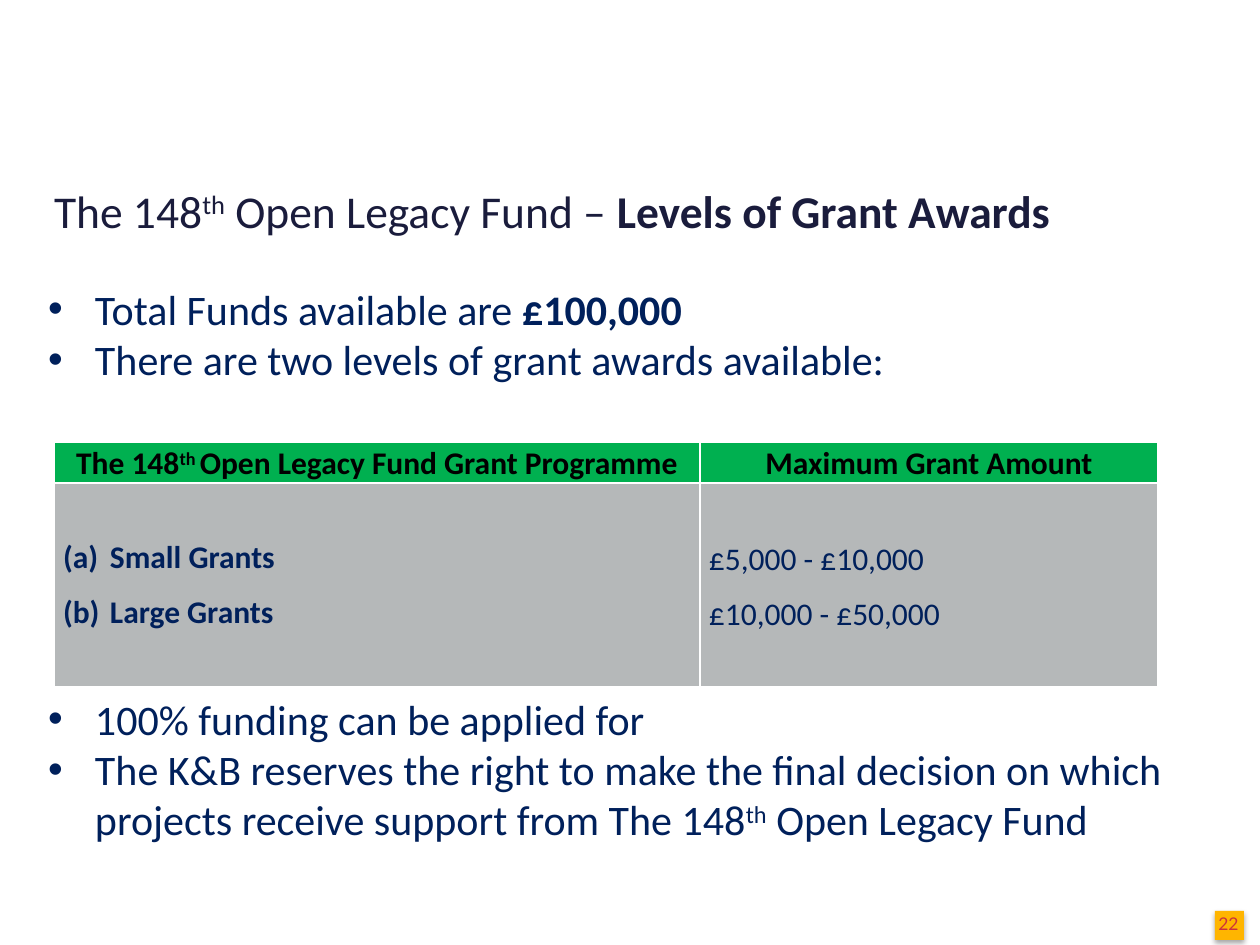
import pptx
import pptx.dml.color
import pptx.enum.shapes
import pptx.enum.text
import pptx.oxml
import pptx.oxml.ns
import pptx.util
from lxml import etree

PX = 914400 // 126  # EMU per px, slide is 1260 x 945 px
COLORS = {"title": "1A1C3C", "navy": "00205B", "black": "000000",
          "header": "00B050", "body": "B5B8B9", "badge": "FFB500",
          "number": "CB333B"}
ALIGN = pptx.enum.text.PP_ALIGN
ANCHOR = pptx.enum.text.MSO_ANCHOR
HANG = 47  # hanging indent of list items, px


def rgb(name):
    return pptx.dml.color.RGBColor.from_string(COLORS[name])


class Deck:
    """Holds the style and the current slide."""

    def __init__(self, font="Calibri"):
        self.font = font
        self.prs = pptx.Presentation()
        self.prs.slide_width = pptx.util.Inches(10)
        self.prs.slide_height = pptx.util.Inches(7.5)
        self.slide = self.prs.slides.add_slide(self.prs.slide_layouts[3])

    def place(self, sp, box):
        sp.left, sp.top, sp.width, sp.height = (v * PX for v in box)

    def frame(self, tf, margins, anchor=ANCHOR.TOP):
        tf.word_wrap = True
        tf.auto_size = pptx.enum.text.MSO_AUTO_SIZE.NONE
        tf.vertical_anchor = anchor
        (tf.margin_left, tf.margin_top,
         tf.margin_right, tf.margin_bottom) = (m * PX for m in margins)

    def runs(self, p, parts, size, color, font=None):
        """Each part is (text, style); style may hold b (bold) and ^ (superscript)."""
        for text, style in parts:
            r = p.add_run()
            r.text = text
            r.font.name = font or self.font
            r.font.size = pptx.util.Pt(size)
            r.font.bold = "b" in style
            r.font.color.rgb = rgb(color)
            if "^" in style:
                r._r.get_or_add_rPr().set("baseline", "30000")

    def bullet(self, p, tag, **attrs):
        pPr = p._p.get_or_add_pPr()
        pPr.set("marL", str(HANG * PX))
        pPr.set("indent", str(-HANG * PX))
        etree.SubElement(pPr, pptx.oxml.ns.qn("a:" + tag), attrs)

    def title(self, box, parts):
        sp = self.slide.shapes.title
        self.place(sp, box)
        self.frame(sp.text_frame, (0, 0, 13, 0))
        p = sp.text_frame.paragraphs[0]
        p.alignment = ALIGN.LEFT
        self.runs(p, parts, 26, "title")

    def bullets(self, idx, box, items):
        sp = self.slide.placeholders[idx]
        self.place(sp, box)
        tf = sp.text_frame
        self.frame(tf, (13, 6, 13, 6))
        for i, parts in enumerate(items):
            p = tf.add_paragraph() if i else tf.paragraphs[0]
            self.bullet(p, "buFont", typeface="Arial")
            self.bullet(p, "buChar", char="•")
            p.space_before = pptx.util.Pt(0)
            self.runs(p, parts, 24, "navy")

    def table(self, box, widths, heights):
        x, y, w, h = (v * PX for v in box)
        tbl = self.slide.shapes.add_table(len(heights), len(widths), x, y, w, h).table
        for col, width in zip(tbl.columns, widths):
            col.width = width * PX
        for row, height in zip(tbl.rows, heights):
            row.height = height * PX
        return tbl

    def cell(self, cell, paragraphs, fill, color, align, top=0, numbered=False):
        cell.fill.solid()
        cell.fill.fore_color.rgb = rgb(fill)
        cell.margin_left = cell.margin_right = 9 * PX
        cell.margin_top, cell.margin_bottom = top * PX, 0
        tf = cell.text_frame
        for i, parts in enumerate(paragraphs):
            p = tf.add_paragraph() if i else tf.paragraphs[0]
            if numbered:
                self.bullet(p, "buAutoNum", type="alphaLcParenBoth")
            p.alignment = align
            p.line_spacing = 1.07
            p.space_after = pptx.util.Pt(8)
            self.runs(p, parts, 18, color)

    def badge(self, box, text_box, number):
        sp = self.slide.shapes.add_shape(
            pptx.enum.shapes.MSO_SHAPE.RECTANGLE, *(v * PX for v in box))
        sp.fill.solid()
        sp.fill.fore_color.rgb = rgb("badge")
        sp.line.fill.background()
        sp.shadow.inherit = False
        effects = sp._element.spPr.find(pptx.oxml.ns.qn("a:effectLst"))
        effects.append(pptx.oxml.parse_xml(
            '<a:outerShdw %s blurRad="39370" dist="22860" dir="5400000" rotWithShape="0">'
            '<a:srgbClr val="%s"><a:alpha val="35000"/></a:srgbClr></a:outerShdw>'
            % (pptx.oxml.ns.nsdecls("a"), COLORS["black"])))
        tb = self.slide.shapes.add_textbox(*(v * PX for v in text_box))
        self.frame(tb.text_frame, (0, 0, 13, 0), ANCHOR.MIDDLE)
        p = tb.text_frame.paragraphs[0]
        p.alignment = ALIGN.CENTER
        self.runs(p, [(number, "")], 10, "number", "Lato")


def main():
    deck = Deck()

    # Title
    deck.title((54, 183, 1183, 100), [
        ("The 148", ""), ("th", "^"), (" Open Legacy Fund – ", ""),
        ("Levels of Grant Awards", "b")])

    # Lists above and below the table
    deck.bullets(1, (35, 277, 1225, 166), [
        [("Total Funds available are ", ""), ("£100,000", "b")],
        [("There are two levels of grant awards available:", "")]])
    deck.bullets(2, (35, 687, 1225, 220), [
        [("100% funding can be applied for", "")],
        [("The K&B reserves the right to make the final decision on which "
          "projects receive support from The 148", ""),
         ("th", "^"), (" Open Legacy Fund", "")]])

    # Grant table
    tbl = deck.table((54, 442, 1104, 244), (646, 458), (40, 204))
    headings = ([("The 148", "b"), ("th ", "b^"),
                 ("Open Legacy Fund Grant Programme", "b")],
                [("Maximum Grant Amount", "b")])
    for col, parts in enumerate(headings):
        deck.cell(tbl.cell(0, col), [parts], "header", "black", ALIGN.CENTER)
    grants = [("Small Grants", "£5,000 - £10,000"),
              ("Large Grants", "£10,000 - £50,000")]
    deck.cell(tbl.cell(1, 0), [[(name, "b")] for name, _ in grants],
              "body", "navy", ALIGN.JUSTIFY, top=53, numbered=True)
    deck.cell(tbl.cell(1, 1), [[(amount, "")] for _, amount in grants],
              "body", "navy", ALIGN.JUSTIFY, top=55)

    # Slide number
    deck.badge((1215, 911, 29, 29), (1215, 905, 40, 38), "22")

    deck.prs.save("out.pptx")


if __name__ == "__main__":
    main()
